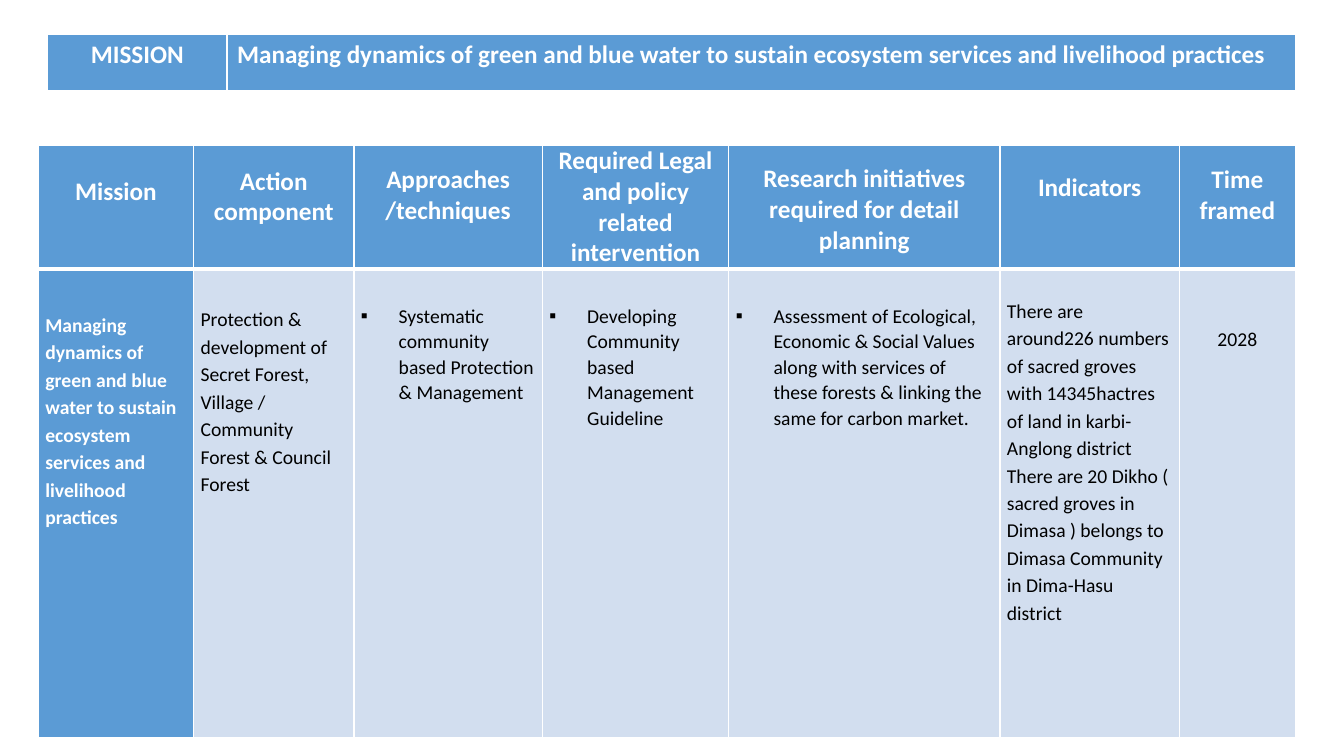
from lxml import etree
from pptx import Presentation
from pptx.dml.color import RGBColor
from pptx.enum.text import PP_ALIGN
from pptx.oxml.ns import qn
from pptx.util import Pt

LEFT, MID = PP_ALIGN.LEFT, PP_ALIGN.CENTER
BLUE, PALE, WHITE, BLACK = "5B9BD5", "D2DEEF", "FFFFFF", "000000"
GOAL = ("Managing dynamics of green and blue water to sustain "
        "ecosystem services and livelihood practices")
WIDTHS = [110.9, 114.5, 134.6, 133.2, 193.7, 128.2, 82.8]
HEADS = [
    ("Mission", 22),
    ("Action component", 14.6),
    ("Approaches /techniques", 13.4),
    ("Required Legal and policy related intervention", 0),
    ("Research initiatives required for detail planning", 12.8),
    ("Indicators", 19.5),
    ("Time framed", 13.4),
]
PLANS = [
    "Systematic community based Protection & Management",
    "Developing Community based Management Guideline",
    "Assessment of Ecological, Economic & Social Values along with services "
    "of these forests & linking the same for carbon market.",
]
SIGNS = [
    "There are around226 numbers of sacred groves with 14345hactres of land "
    "in karbi-Anglong district",
    "There are 20 Dikho ( sacred groves in Dimasa ) belongs to Dimasa "
    "Community in Dima-Hasu district",
]


def color(code):
    return RGBColor.from_string(code)


def add_grid(slide, left, top, widths, heights):
    frame = slide.shapes.add_table(len(heights), len(widths), Pt(left), Pt(top),
                                   Pt(sum(widths)), Pt(sum(heights)))
    grid = frame.table
    grid.horz_banding = False
    for col, width in zip(grid.columns, widths):
        col.width = Pt(width)
    for row, height in zip(grid.rows, heights):
        row.height = Pt(height)
    return grid


def add_edges(cell, above, below):
    props = cell._tc.get_or_add_tcPr()
    for side, width in zip("LRTB", (1, 1, above, below)):
        line = etree.SubElement(props, qn(f"a:ln{side}"), w=str(Pt(width)))
        fill = etree.SubElement(line, qn("a:solidFill"))
        etree.SubElement(fill, qn("a:srgbClr"), val=WHITE)


def style_cell(cell, fill, inset, above=1, below=1):
    add_edges(cell, above, below)
    cell.fill.solid()
    cell.fill.fore_color.rgb = color(fill)
    side, top, base = inset
    cell.margin_left = cell.margin_right = Pt(side)
    cell.margin_top, cell.margin_bottom = Pt(top), Pt(base)


def add_mark(para):
    props = para._p.get_or_add_pPr()
    props.set("marL", str(Pt(27)))
    props.set("indent", str(-Pt(27)))
    etree.SubElement(props, qn("a:buFont"), typeface="Calibri")
    etree.SubElement(props, qn("a:buChar"), char="▪")


def add_text(cell, lines, size, ink, bold=False, align=LEFT, lead=1.0, mark=False):
    frame = cell.text_frame
    for i, line in enumerate(lines):
        para = frame.add_paragraph() if i else frame.paragraphs[0]
        para.alignment = align
        para.line_spacing = lead
        if mark:
            add_mark(para)
        run = para.add_run()
        run.text = line
        font = run.font
        font.name, font.size, font.bold = "Calibri", Pt(size), bold
        font.color.rgb = color(ink)


def add_banner(slide):
    grid = add_grid(slide, 34, 24.5, [128.2, 763.2], [41])
    for cell, text, align in zip(grid.rows[0].cells, ("MISSION", GOAL), (MID, LEFT)):
        style_cell(cell, BLUE, (7.2, 3.6, 3.6), below=3)
        add_text(cell, [text], 18, WHITE, True, align)


def add_head(cell, text, top):
    style_cell(cell, BLUE, (5, top, 0), below=3)
    add_text(cell, [text], 18, WHITE, True, MID)


def add_body(cell, lines, top, fill=PALE, ink=BLACK, **look):
    style_cell(cell, fill, (5, top, 0), above=3)
    add_text(cell, lines, 14, ink, **look)


def add_plan(slide):
    grid = add_grid(slide, 27.4, 104, WIDTHS, [88, 334.8])
    for cell, (text, top) in zip(grid.rows[0].cells, HEADS):
        add_head(cell, text, top)
    cells = list(grid.rows[1].cells)
    add_body(cells[0], [GOAL], 29.7, BLUE, WHITE, bold=True, lead=1.15)
    add_body(cells[1], ["Protection & development of Secret Forest, Village / "
                        "Community Forest & Council Forest"], 25.7, lead=1.15)
    for cell, text in zip(cells[2:5], PLANS):
        add_body(cell, [text], 24.3, lead=1.07, mark=True)
    add_body(cells[5], SIGNS, 19.7, lead=1.15)
    add_body(cells[6], ["2028"], 39.3, lead=1.15, align=MID)


def main():
    deck = Presentation()
    deck.slide_width, deck.slide_height = Pt(960), Pt(540)
    slide = deck.slides.add_slide(deck.slide_layouts[6])
    add_banner(slide)
    add_plan(slide)
    deck.save("out.pptx")


if __name__ == "__main__":
    main()
